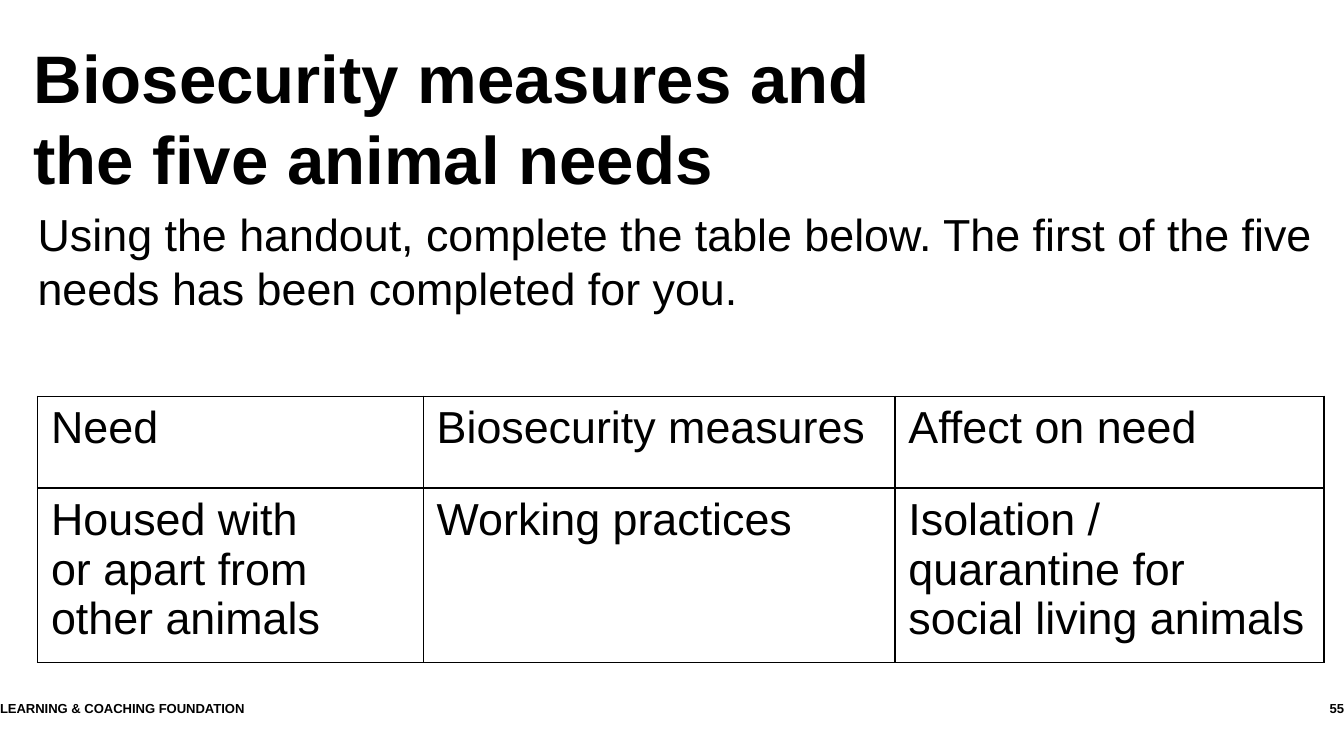
from lxml import etree
from pptx import Presentation
from pptx import util as u
from pptx.dml.color import RGBColor
from pptx.enum import text
from pptx.oxml.ns import qn

W = 10
H = W * 9 / 16
COLORS = {"ink": "000000", "paper": "FFFFFF"}
FONT = "Arial"
LEFT, FOOT_TOP, FOOT_H = 0.28, 5.21, 0.3
L, R = text.PP_ALIGN.LEFT, text.PP_ALIGN.RIGHT

TEXTS = [
    ("Biosecurity measures and \vthe five animal needs",
     (0.25, 0.27, 9.23, 1.21), 36, True, L),
    ("Using the handout, complete the table below. The first of the five "
     "needs has been completed for you.",
     (LEFT, 1.54, W - LEFT, 0.9), 24, False, L),
    ("LEARNING & COACHING FOUNDATION",
     (0, FOOT_TOP, 8.41, FOOT_H), 7, True, L),
    ("55", (9.01, FOOT_TOP, W - 9.01, FOOT_H), 7, True, R),
]
NEEDS = [
    ["Need", "Biosecurity measures", "Affect on need"],
    ["Housed with \vor apart from \vother animals", "Working practices",
     "Isolation / quarantine for social living animals"],
]
COLS, ROWS = [2.87, 3.51, 3.19], [0.68, 1.13]
TABLE_TOP = 2.95


def write(tf, words, size, bold=False, align=L):
    tf.word_wrap = True
    p = tf.paragraphs[0]
    p.text = words
    p.alignment = align
    for r in p.runs:
        r.font.name, r.font.size, r.font.bold = FONT, u.Pt(size), bold
        r.font.color.rgb = RGBColor.from_string(COLORS["ink"])


def add_borders(cell):
    pr = cell._tc.get_or_add_tcPr()
    for i, side in enumerate(("lnL", "lnR", "lnT", "lnB")):
        ln = etree.Element(qn("a:" + side), w=str(u.Pt(1)))
        fill = etree.SubElement(ln, qn("a:solidFill"))
        etree.SubElement(fill, qn("a:srgbClr"), val=COLORS["ink"])
        pr.insert(i, ln)


prs = Presentation()
prs.slide_width, prs.slide_height = u.Inches(W), u.Inches(H)
s = prs.slides.add_slide(prs.slide_layouts[6])
s.background.fill.solid()
s.background.fill.fore_color.rgb = RGBColor.from_string(COLORS["paper"])

for words, box, size, bold, align in TEXTS:
    tf = s.shapes.add_textbox(*map(u.Inches, box)).text_frame
    tf.margin_left = tf.margin_right = tf.margin_top = tf.margin_bottom = 0
    write(tf, words, size, bold, align)

box = (LEFT, TABLE_TOP, sum(COLS), sum(ROWS))
table = s.shapes.add_table(len(ROWS), len(COLS), *map(u.Inches, box)).table
table.first_row = table.horz_banding = False
for col, width in zip(table.columns, COLS):
    col.width = u.Inches(width)
for row, height, needs in zip(table.rows, ROWS, NEEDS):
    row.height = u.Inches(height)
    for cell, words in zip(row.cells, needs):
        cell.fill.background()
        add_borders(cell)
        write(cell.text_frame, words, 24)

prs.save("out.pptx")
